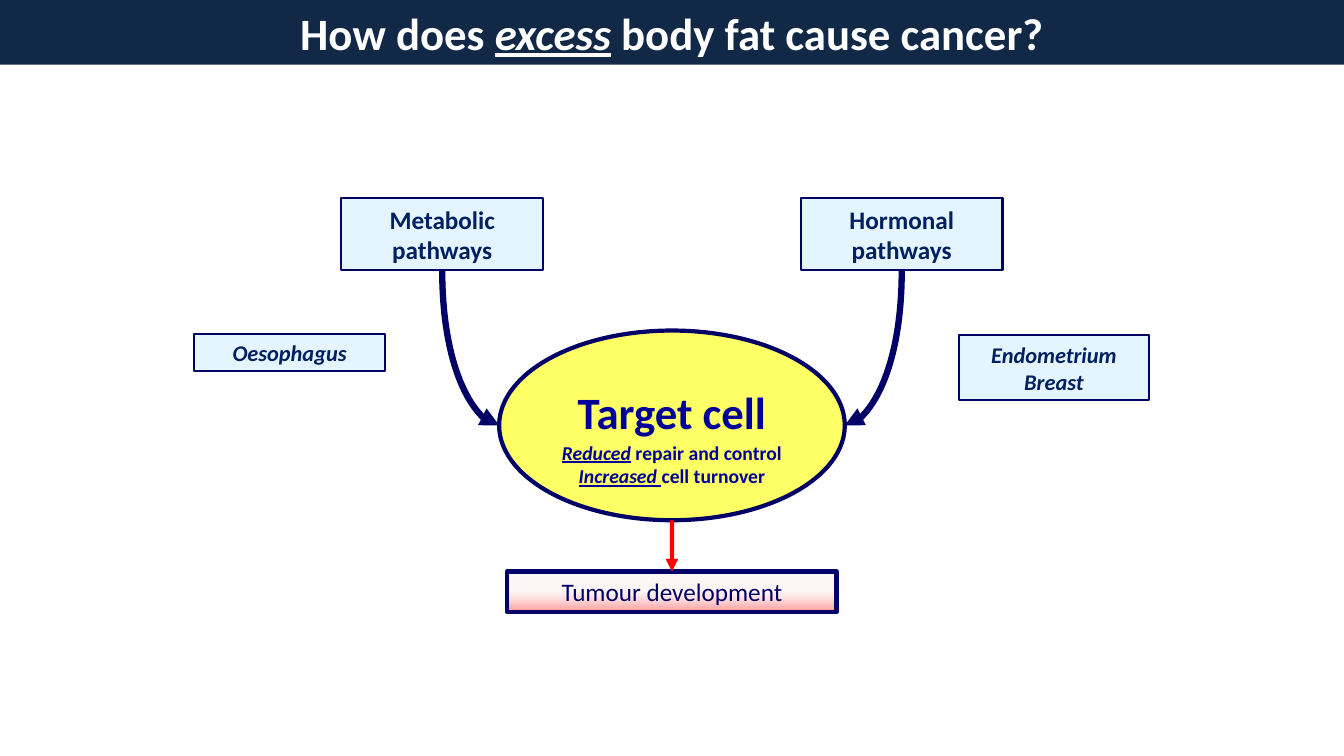
from pptx import Presentation
from pptx.dml.color import RGBColor
from pptx.enum.shapes import MSO_CONNECTOR, MSO_SHAPE
from pptx.enum.text import MSO_ANCHOR, PP_ALIGN
from pptx.oxml.ns import qn
from pptx.util import Cm, Pt
from lxml.etree import SubElement

WIDTH, HEIGHT = 33.87, 19.05
CENTRE = WIDTH / 2
NAVY, INK, CELL_INK = "000066", "002060", "000099"


def colour(value):
    return RGBColor.from_string(value)


def write(shape, *lines, size, ink, bold=True, italic=False):
    """Each line is a string or a list of runs; a run in a tuple is stressed."""
    frame = shape.text_frame
    frame.word_wrap = True
    frame.vertical_anchor = MSO_ANCHOR.MIDDLE
    frame.margin_top = frame.margin_bottom = Cm(0.13)
    for index, line in enumerate(lines):
        paragraph = frame.add_paragraph() if index else frame.paragraphs[0]
        paragraph.alignment = PP_ALIGN.CENTER
        for part in [line] if isinstance(line, str) else line:
            stressed = isinstance(part, tuple)
            run = paragraph.add_run()
            run.text = part[0] if stressed else part
            font = run.font
            font.name, font.size, font.bold = "Calibri", Pt(size), bold
            font.italic = italic or stressed
            font.underline = stressed
            font.color.rgb = colour(ink)


def set_opacity(shape, *percents):
    for tint, percent in zip(shape._element.spPr.iter(qn("a:srgbClr")), percents):
        SubElement(tint, qn("a:alpha"), val=str(percent * 1000))


def add_outlined(slide, kind, box, weight):
    shape = slide.shapes.add_shape(kind, *map(Cm, box))
    shape.shadow.inherit = False
    shape.line.color.rgb = colour(NAVY)
    shape.line.width = Pt(weight)
    return shape


def add_arrow(slide, kind, start, end, ink, weight, head):
    arrow = slide.shapes.add_connector(kind, *map(Cm, (*start, *end)))
    arrow.line.color.rgb = colour(ink)
    arrow.line.width = Pt(weight)
    SubElement(arrow.line._get_or_add_ln(), qn(head), type="triangle")
    SubElement(arrow._element.spPr, qn("a:effectLst"))
    return arrow


def add_title(slide, left, top, width, height):
    title = slide.shapes.title
    title.left, title.top, title.width, title.height = map(Cm, (left, top, width, height))
    title.fill.solid()
    title.fill.fore_color.rgb = colour("112946")
    write(title, ["How does ", ("excess",), " body fat cause cancer?"],
          size=32, ink="FFFFFF")


def add_label(slide, box, *lines, **style):
    label = add_outlined(slide, MSO_SHAPE.RECTANGLE, box, 1.5)
    label.fill.solid()
    label.fill.fore_color.rgb = colour("CCECFF")
    set_opacity(label, 50)
    write(label, *lines, ink=INK, **style)


def add_target_cell(slide, left, top, width, height):
    cell = add_outlined(slide, MSO_SHAPE.OVAL, (left, top, width, height), 3)
    cell.fill.solid()
    cell.fill.fore_color.rgb = colour("FFFF66")
    inner = left + 0.84, width - 1.68
    name = slide.shapes.add_textbox(
        Cm(inner[0]), Cm(top + 1.22), Cm(inner[1]), Cm(1.62))
    write(name, "Target cell", size=32, ink=CELL_INK)
    effects = slide.shapes.add_textbox(
        Cm(inner[0]), Cm(top + 2.64), Cm(inner[1]), Cm(1.45))
    write(effects, [("Reduced",), " repair and control"],
          [("Increased ",), "cell turnover"], size=14, ink=CELL_INK)


def add_tumour(slide, left, top, width, height, cell_bottom):
    tumour = add_outlined(slide, MSO_SHAPE.RECTANGLE, (left, top, width, height), 3)
    tumour.fill.gradient()
    tumour.fill.gradient_angle = 270
    for stop, (position, tint) in zip(tumour.fill.gradient_stops,
                                      [(0.5, "FFD8D8"), (1, "FF0000")]):
        stop.position, stop.color.rgb = position, colour(tint)
    set_opacity(tumour, 24, 40)
    write(tumour, "Tumour development", size=18, ink=NAVY, bold=False)
    middle = left + width / 2
    arrow = add_arrow(slide, MSO_CONNECTOR.STRAIGHT, (middle, cell_bottom),
                      (middle, top), "FF0000", 3, "a:tailEnd")
    arrow.end_connect(tumour, 0)


def add_pathway(slide, left, top, width, height, text, cell_side):
    add_label(slide, (left, top, width, height), text, size=18)
    # The curve leaves the cell sideways and rises to the box
    curve = add_arrow(slide, MSO_CONNECTOR.CURVE, cell_side,
                      (left + width / 2, top + height), NAVY, 4.5, "a:headEnd")
    curve._element.spPr.find(qn("a:prstGeom")).set("prst", "curvedConnector2")


def main():
    deck = Presentation()
    deck.slide_width, deck.slide_height = Cm(WIDTH), Cm(HEIGHT)
    slide = deck.slides.add_slide(deck.slide_layouts[5])
    add_title(slide, 0, 0, WIDTH, 1.63)

    # Target cell and its outcome, on the centre line
    cell_width, cell_top, cell_height = 8.71, 8.33, 4.78
    add_target_cell(slide, CENTRE - cell_width / 2, cell_top, cell_width, cell_height)
    add_tumour(slide, CENTRE - 4.15, 14.4, 8.3, 1.02, cell_top + cell_height)

    # Pathways, mirrored about the centre line
    for side, text in ((-1, "Metabolic pathways"), (1, "Hormonal pathways")):
        cell_side = CENTRE + side * cell_width / 2, cell_top + cell_height / 2
        add_pathway(slide, CENTRE + side * 5.79 - 2.54, 5, 5.08, 1.8, text, cell_side)

    # Cancer sites beside each pathway
    add_label(slide, (4.9, 8.42, 4.8, 0.94), "Oesophagus", size=16, italic=True)
    add_label(slide, (24.16, 8.45, 4.8, 1.63), "Endometrium", "Breast",
              size=16, italic=True)
    deck.save("out.pptx")


if __name__ == "__main__":
    main()
